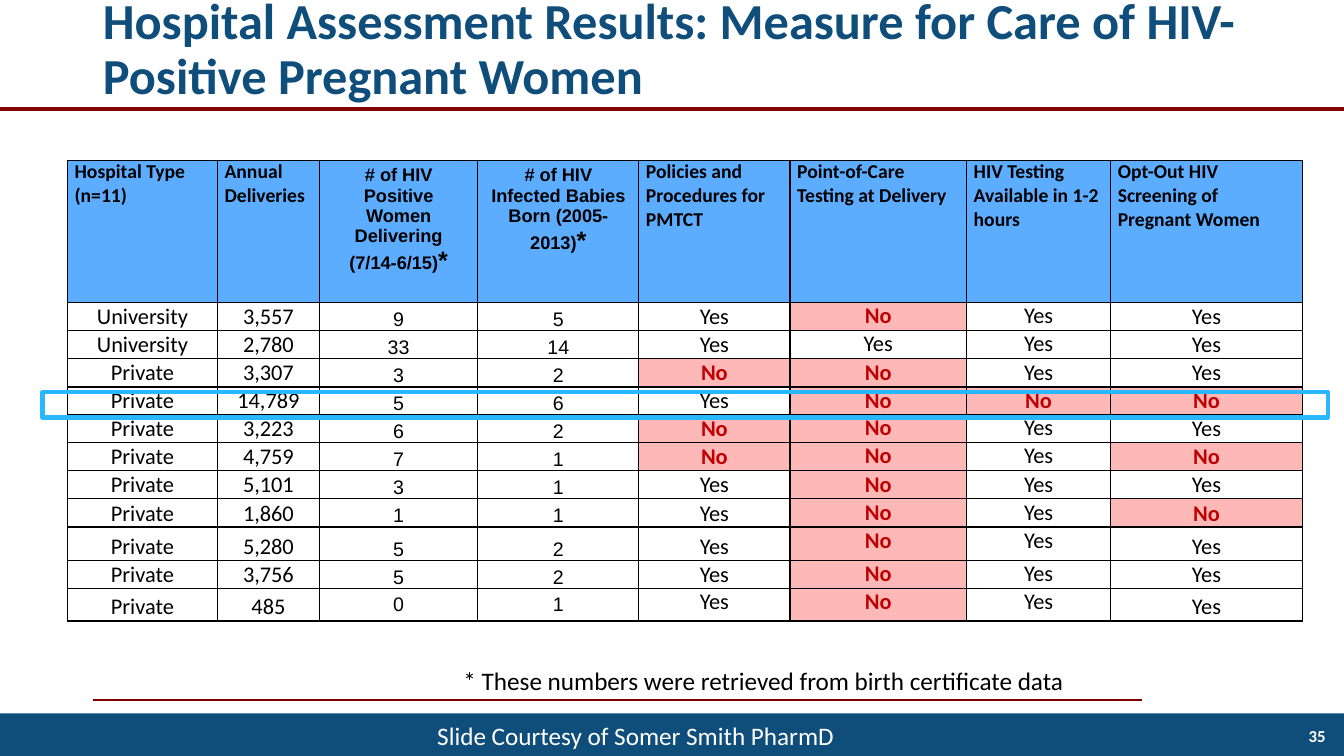
from lxml import etree
from pptx import Presentation
from pptx.dml.color import RGBColor
from pptx.enum.shapes import MSO_CONNECTOR, MSO_SHAPE
from pptx.enum.text import MSO_ANCHOR, MSO_AUTO_SIZE, PP_ALIGN
from pptx.oxml.ns import qn
from pptx.util import Cm, Pt

LEFT, CENTER, RIGHT = PP_ALIGN.LEFT, PP_ALIGN.CENTER, PP_ALIGN.RIGHT
TOP, MIDDLE, BOTTOM = MSO_ANCHOR.TOP, MSO_ANCHOR.MIDDLE, MSO_ANCHOR.BOTTOM
GROW, FIXED = MSO_AUTO_SIZE.SHAPE_TO_FIT_TEXT, MSO_AUTO_SIZE.NONE
RECTANGLE, STRAIGHT = MSO_SHAPE.RECTANGLE, MSO_CONNECTOR.STRAIGHT
TITLE_ONLY = 5

NAVY, MAROON, BLACK, WHITE = "0F4D7B", "800000", "000000", "FFFFFF"
HEADER_BLUE, HIGHLIGHT_BLUE = "5CADFF", "29B8FF"
NO_RED, NO_PINK = "C00000", "FFB8B8"

SLIDE_WIDTH, SLIDE_HEIGHT = 33.87, 19.05
COLUMN_WIDTHS = [3.78, 2.57, 3.99, 4.06, 3.81, 4.45, 3.63, 4.83]
ROW_HEIGHTS = [3.58] + [0.71] * 3 + [0.58] + [0.71] * 4 + [0.84] + [0.71] * 2
BIRTH_COLUMNS = (2, 3)  # counts from birth certificates, set in Arial
TOP_COLUMNS = (5, 6)

# Cell margins: left, top, right, bottom
TEXT_MARGINS = (0.18, 0, 0.18, 0)
COUNT_MARGINS = (0.02, 0.02, 0.02, 0)
ROOMY_MARGINS = (0.25, 0.13, 0.25, 0.13)

HEADINGS = [
    "Hospital Type (n=11)",
    "Annual Deliveries",
    "# of HIV Positive Women Delivering (7/14-6/15)*",
    "# of HIV Infected Babies Born (2005-2013)*",
    "Policies and Procedures for PMTCT",
    "Point-of-Care Testing at Delivery",
    "HIV Testing Available in 1-2 hours",
    "Opt-Out HIV Screening of Pregnant Women",
]
HOSPITALS = [
    ("University", "3,557", "9", "5", "Yes", "No", "Yes", "Yes"),
    ("University", "2,780", "33", "14", "Yes", "Yes", "Yes", "Yes"),
    ("Private", "3,307", "3", "2", "No", "No", "Yes", "Yes"),
    ("Private", "14,789", "5", "6", "Yes", "No", "No", "No"),
    ("Private", "3,223", "6", "2", "No", "No", "Yes", "Yes"),
    ("Private", "4,759", "7", "1", "No", "No", "Yes", "No"),
    ("Private", "5,101", "3", "1", "Yes", "No", "Yes", "Yes"),
    ("Private", "1,860", "1", "1", "Yes", "No", "Yes", "No"),
    ("Private", "5,280", "5", "2", "Yes", "No", "Yes", "Yes"),
    ("Private", "3,756", "5", "2", "Yes", "No", "Yes", "Yes"),
    ("Private", "485", "0", "1", "Yes", "No", "Yes", "Yes"),
]


def rgb(color):
    return RGBColor.from_string(color)


def add_run(paragraph, text, size, color, bold=False, font="Calibri"):
    run = paragraph.add_run()
    run.text = text
    run.font.name = font
    run.font.size = Pt(size)
    run.font.bold = bold
    run.font.color.rgb = rgb(color)


def add_rule(slide, left, right, y, weight):
    rule = slide.shapes.add_connector(STRAIGHT, Cm(left), Cm(y), Cm(right), Cm(y))
    rule.line.color.rgb = rgb(MAROON)
    rule.line.width = Pt(weight)
    etree.SubElement(rule._element.spPr, qn("a:effectLst"))


def add_rectangle(slide, left, top, width, height):
    rectangle = slide.shapes.add_shape(
        RECTANGLE, Cm(left), Cm(top), Cm(width), Cm(height))
    rectangle.shadow.inherit = False
    return rectangle


def add_label(slide, box, text, size, color, bold=False, align=LEFT,
              anchor=TOP, wrap=True, fit=GROW):
    label = slide.shapes.add_textbox(*map(Cm, box))
    frame = label.text_frame
    frame.word_wrap = wrap
    frame.auto_size = fit
    frame.vertical_anchor = anchor
    paragraph = frame.paragraphs[0]
    paragraph.alignment = align
    add_run(paragraph, text, size, color, bold)


def set_title(slide, text):
    title = slide.shapes.title
    title.left, title.top = Cm(2.34), Cm(-0.56)
    title.width, title.height = Cm(29.21), Cm(3.68)
    frame = title.text_frame
    frame.word_wrap = True
    frame.auto_size = FIXED
    frame.vertical_anchor = MIDDLE
    paragraph = frame.paragraphs[0]
    paragraph.alignment = LEFT
    paragraph.line_spacing = 0.9
    add_run(paragraph, text, 36, NAVY, bold=True)


def add_borders(cell):
    properties = cell._tc.get_or_add_tcPr()
    for side in ("lnL", "lnR", "lnT", "lnB"):
        border = etree.SubElement(properties, qn(f"a:{side}"), w=str(Pt(1)))
        fill = etree.SubElement(border, qn("a:solidFill"))
        etree.SubElement(fill, qn("a:srgbClr"), val=BLACK)


def format_cell(cell, margins, anchor, align, fill=None):
    """Formats the cell and returns its paragraph."""
    add_borders(cell)
    if fill:
        cell.fill.solid()
        cell.fill.fore_color.rgb = rgb(fill)
    else:
        cell.fill.background()
    (cell.margin_left, cell.margin_top,
     cell.margin_right, cell.margin_bottom) = map(Cm, margins)
    cell.vertical_anchor = anchor
    paragraph = cell.text_frame.paragraphs[0]
    paragraph.alignment = align
    return paragraph


def fill_heading(cell, column, heading):
    if column in BIRTH_COLUMNS:
        paragraph = format_cell(cell, ROOMY_MARGINS, TOP, CENTER, HEADER_BLUE)
        add_run(paragraph, heading.rstrip("*"), 13, BLACK, True, "Arial")
        add_run(paragraph, "*", 18, BLACK, True, "Arial")
    else:
        paragraph = format_cell(cell, TEXT_MARGINS, TOP, LEFT, HEADER_BLUE)
        add_run(paragraph, heading, 14, BLACK, True)


def fill_result(cell, column, value, is_last):
    at_top = column in TOP_COLUMNS or (is_last and column in (2, 3, 4))
    anchor = TOP if at_top else BOTTOM
    if column in BIRTH_COLUMNS:
        margins = ROOMY_MARGINS if is_last else COUNT_MARGINS
        paragraph = format_cell(cell, margins, anchor, CENTER)
        add_run(paragraph, value, 14, BLACK, font="Arial")
    else:
        is_no = value == "No"
        paragraph = format_cell(cell, TEXT_MARGINS, anchor, CENTER,
                                NO_PINK if is_no else None)
        add_run(paragraph, value, 16, NO_RED if is_no else BLACK, is_no)


def add_hospital_table(slide):
    table = slide.shapes.add_table(
        len(ROW_HEIGHTS), len(COLUMN_WIDTHS), Cm(1.7), Cm(4.04),
        Cm(sum(COLUMN_WIDTHS)), Cm(sum(ROW_HEIGHTS))).table
    table.first_row = table.horz_banding = False
    for column, width in zip(table.columns, COLUMN_WIDTHS):
        column.width = Cm(width)
    for row, height in zip(table.rows, ROW_HEIGHTS):
        row.height = Cm(height)
    for column, heading in enumerate(HEADINGS):
        fill_heading(table.cell(0, column), column, heading)
    for row, hospital in enumerate(HOSPITALS, start=1):
        for column, value in enumerate(hospital):
            fill_result(table.cell(row, column), column, value,
                        row == len(HOSPITALS))


def main():
    deck = Presentation()
    deck.slide_width, deck.slide_height = Cm(SLIDE_WIDTH), Cm(SLIDE_HEIGHT)
    slide = deck.slides.add_slide(deck.slide_layouts[TITLE_ONLY])

    # Rules and footer bar
    add_rule(slide, 2.34, 28.78, 17.65, 1.5)
    footer_bar = add_rectangle(slide, 0, 17.98, SLIDE_WIDTH, 1.07)
    footer_bar.fill.solid()
    footer_bar.fill.fore_color.rgb = rgb(NAVY)
    footer_bar.line.fill.background()
    add_rule(slide, 0, SLIDE_WIDTH, 2.74, 3)

    # Title and page number
    set_title(slide, "Hospital Assessment Results: Measure for Care of "
                     "HIV-Positive Pregnant Women")
    add_label(slide, (26.04, 18.03, 7.62, 1.02), "35", 12, WHITE, bold=True,
              align=RIGHT, anchor=MIDDLE, fit=FIXED)

    # Results, with the largest hospital outlined
    add_hospital_table(slide)
    highlight = add_rectangle(slide, 1.07, 9.88, 32.39, 0.64)
    highlight.fill.background()
    highlight.line.color.rgb = rgb(HIGHLIGHT_BLUE)
    highlight.line.width = Pt(3)

    # Footnote and credit
    add_label(slide, (11.43, 16.64, 18.14, 1.02),
              "* These numbers were retrieved from birth certificate data",
              18, BLACK)
    add_label(slide, (10.77, 18.03, 10.62, 1.02),
              "Slide Courtesy of Somer Smith PharmD", 18, WHITE, wrap=False)

    deck.save("out.pptx")


if __name__ == "__main__":
    main()
